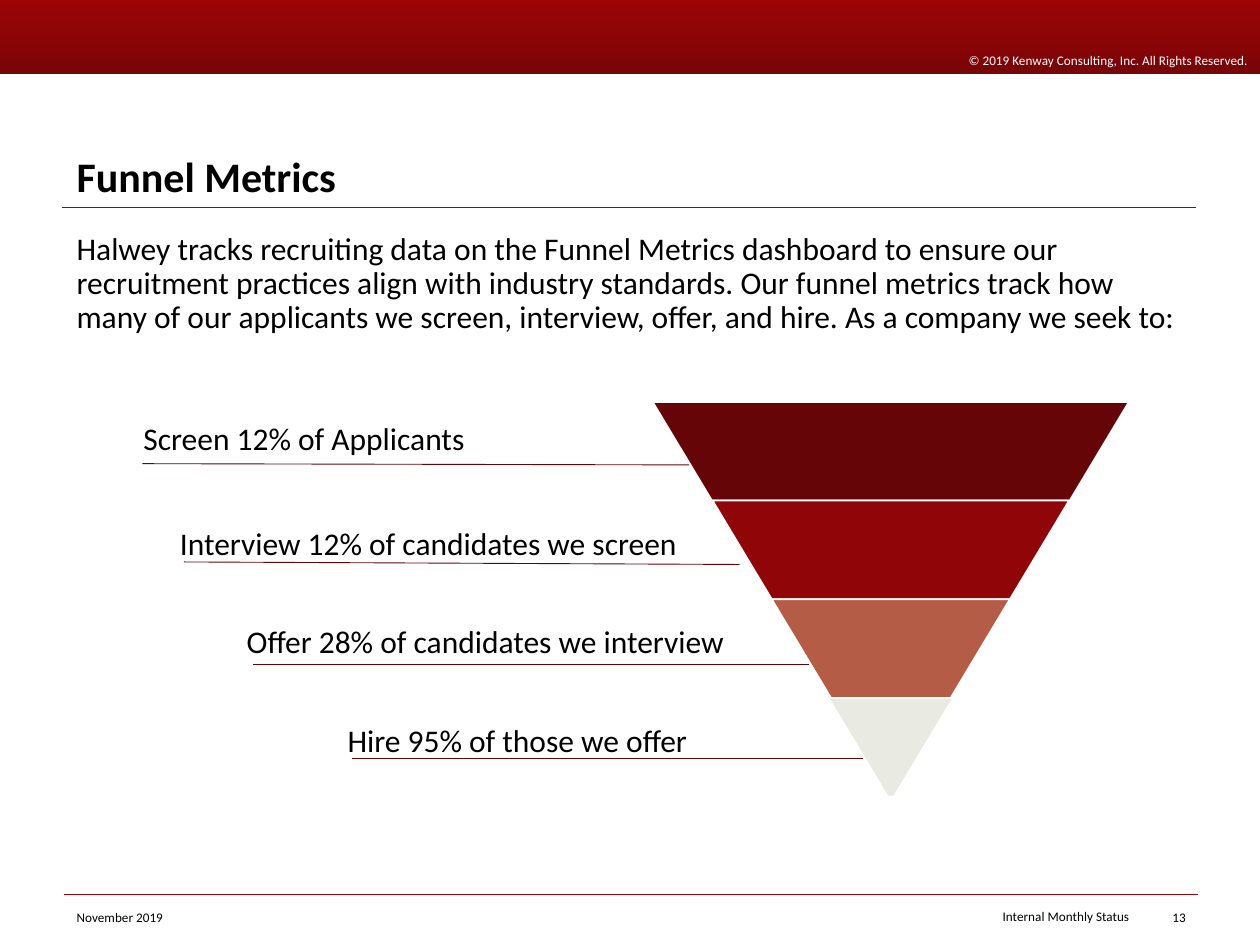
from copy import deepcopy
from dataclasses import dataclass

from pptx import Presentation
from pptx import util as u
from pptx.dml.color import RGBColor
from pptx.enum import shapes, text
from pptx.oxml import ns, xmlchemy

COLUMNS, ROWS = 100, 75


@dataclass(frozen=True)
class Theme:
    font: str = "Calibri"
    title: float = 24
    body: float = 18
    small: float = 7.5
    ink: str = "000000"
    paper: str = "FFFFFF"
    rule: str = "900507"
    leader: str = "660507"
    banner: tuple = ((0, "9B0507"), (0.35, "900507"), (0.65, "870507"), (0.91, "780507"))
    funnel: tuple = ("660507", "900507", "B45C45", "E9EAE2")


class Deck:
    def __init__(self, theme):
        self.theme = theme
        self.prs = Presentation()
        self.prs.slide_width, self.prs.slide_height = u.Inches(10), u.Inches(7.5)
        self.slide = self.prs.slides.add_slide(self.prs.slide_layouts[6])

    def place(self, left, top, width, height):
        column, row = self.prs.slide_width / COLUMNS, self.prs.slide_height / ROWS
        return [round(n) for n in (left * column, top * row, width * column, height * row)]

    def set_text(self, frame, words, size, color, align, anchor, bold=False, spacing=None):
        frame.word_wrap = True
        frame.vertical_anchor = anchor
        paragraph = frame.paragraphs[0]
        paragraph.text = words
        paragraph.alignment = align
        paragraph.line_spacing = spacing
        font = paragraph.font
        font.name, font.size, font.bold = self.theme.font, u.Pt(size), bold
        font.color.rgb = RGBColor.from_string(color)

    def label(self, words, area, size, align=text.PP_ALIGN.LEFT,
              anchor=text.MSO_ANCHOR.TOP, **style):
        box = self.slide.shapes.add_textbox(*self.place(*area))
        self.set_text(box.text_frame, words, size, self.theme.ink, align, anchor, **style)

    def shape(self, kind, area):
        shape = self.slide.shapes.add_shape(kind, *self.place(*area))
        shape.shadow.inherit = False
        return shape

    def banner(self, words, area):
        band = self.shape(shapes.MSO_SHAPE.RECTANGLE, area)
        band.line.fill.background()
        band.fill.gradient()
        band.fill.gradient_angle = 270
        stop_list = band.element.spPr.find(".//" + ns.qn("a:gsLst"))
        for _ in self.theme.banner[2:]:
            stop_list.append(deepcopy(stop_list[0]))
        for stop, (position, color) in zip(band.fill.gradient_stops, self.theme.banner):
            stop.position = position
            stop.color.rgb = RGBColor.from_string(color)
        self.set_text(band.text_frame, words, self.theme.small, self.theme.paper,
                      text.PP_ALIGN.RIGHT, text.MSO_ANCHOR.BOTTOM)

    def tier(self, area, color):
        tier = self.shape(shapes.MSO_SHAPE.TRAPEZOID, area)
        tier.rotation = 180
        tier.adjustments[0] = 0.6
        tier.fill.solid()
        tier.fill.fore_color.rgb = RGBColor.from_string(color)
        tier.line.color.rgb = RGBColor.from_string(self.theme.paper)
        tier.line.width = u.Pt(1)

    def line(self, start, end, color):
        line = self.slide.shapes.add_connector(
            shapes.MSO_CONNECTOR.STRAIGHT, *self.place(*start, *end))
        line.line.color.rgb = RGBColor.from_string(color)
        line.line.width = u.Pt(0.5)
        line.element.spPr.append(xmlchemy.OxmlElement("a:effectLst"))

    def save(self):
        self.prs.save("out.pptx")


def main():
    theme = Theme()
    deck = Deck(theme)
    right, middle = text.PP_ALIGN.RIGHT, text.MSO_ANCHOR.MIDDLE

    deck.banner("© 2019 Kenway Consulting, Inc. All Rights Reserved.", (0, 0, COLUMNS, 5.9))
    deck.label("Funnel Metrics", (5.1, 8.6, 90, 7.9), theme.title,
               anchor=text.MSO_ANCHOR.BOTTOM, bold=True, spacing=0.9)
    deck.line((4.9, 16.5), (94.9, 16.5), theme.rule)
    deck.label(
        "Halwey tracks recruiting data on the Funnel Metrics dashboard to ensure our "
        "recruitment practices align with industry standards. Our funnel metrics track how "
        "many of our applicants we screen, interview, offer, and hire. As a company we seek to:",
        (5.1, 18, 90, 47.6), theme.body, spacing=0.9)

    center, funnel_top, tier_height = 70.7, 31.9, 7.83
    tier_widths = (37.8, 28.3, 18.9, 9.9)
    for step, (width, color) in enumerate(zip(tier_widths, theme.funnel)):
        top = funnel_top + step * tier_height
        deck.tier((center - width / 2, top, width, tier_height), color)

    goals = (
        ("Screen 12% of Applicants", (10.4, 32.8, 28.4, 7.1), (11.3, 36.8), (54.7, 36.9)),
        ("Interview 12% of candidates we screen", (13.3, 41.1, 44.6, 7.1),
         (14.6, 44.6), (58.7, 44.8)),
        ("Offer 28% of candidates we interview", (18.6, 48.9, 40.4, 4),
         (20.1, 52.7), (64.2, 52.7)),
        ("Hire 95% of those we offer", (26.6, 56.7, 29.9, 7.1), (27.9, 60.2), (68.5, 60.2)),
    )
    for goal, area, start, end in goals:
        deck.label(goal, area, theme.body)
        deck.line(start, end, theme.leader)

    deck.line((5.1, 71), (95.1, 71), theme.rule)
    deck.label("November 2019", (5.1, 71.5, 13.6, 2.8), theme.small,
               anchor=middle, spacing=0.9)
    deck.label("Internal Monthly Status", (65.2, 71.4, 25.4, 2.8), theme.small,
               right, middle, spacing=0.9)
    deck.label("13", (91, 71.4, 4.1, 2.8), theme.small, right, middle)
    deck.save()


if __name__ == "__main__":
    main()
